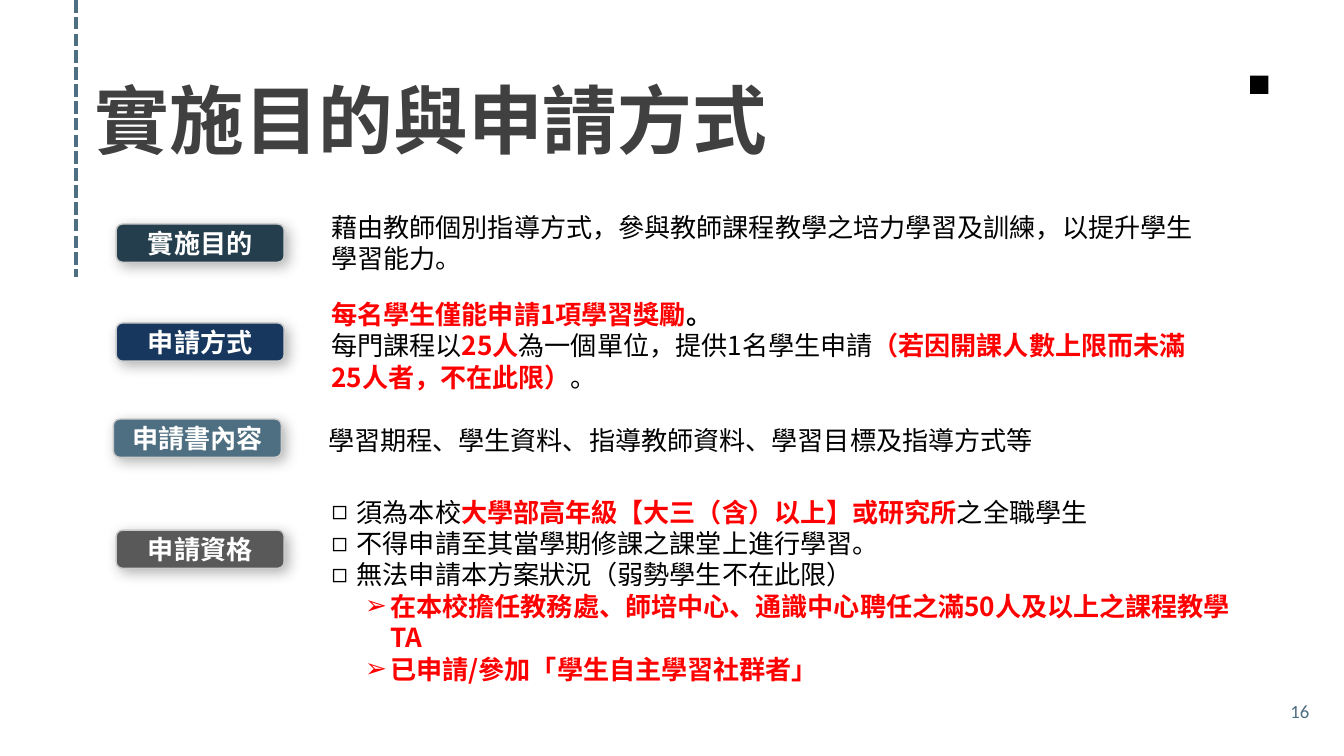
from lxml import etree
from pptx import Presentation
from pptx.dml.color import RGBColor
from pptx.enum.dml import MSO_LINE
from pptx.enum.shapes import MSO_CONNECTOR, MSO_SHAPE
from pptx.enum.text import MSO_ANCHOR, MSO_AUTO_SIZE, PP_ALIGN
from pptx.oxml.ns import qn
from pptx.util import Pt

RECTANGLE, ROUNDED = MSO_SHAPE.RECTANGLE, MSO_SHAPE.ROUNDED_RECTANGLE
TOP, MIDDLE = MSO_ANCHOR.TOP, MSO_ANCHOR.MIDDLE
LEFT, CENTER, RIGHT = PP_ALIGN.LEFT, PP_ALIGN.CENTER, PP_ALIGN.RIGHT
CJK = "Noto Sans CJK SC"
COLORS = {
    "black": "000000", "white": "FFFFFF", "red": "FF0000", "title": "404040",
    "steel": "4E6E81", "teal": "243E4D", "navy": "17375E", "gray": "595959",
    "border": "CBCBCB",
}
# Run styles: colour and bold
PLAIN, STRONG, ALERT = ("black", False), ("black", True), ("red", True)
LABEL = ("white", True)


def color(name):
    return RGBColor.from_string(COLORS[name])


def write(shape, paragraphs, size=28, font=CJK, align=LEFT, anchor=TOP):
    """Fill a shape with paragraphs, each a list of (text, (colour, bold))."""
    frame = shape.text_frame
    frame.word_wrap = True
    frame.auto_size = MSO_AUTO_SIZE.NONE
    frame.vertical_anchor = anchor
    for index, runs in enumerate(paragraphs):
        paragraph = frame.add_paragraph() if index else frame.paragraphs[0]
        paragraph.alignment = align
        paragraph.line_spacing = Pt(size * 1.2)
        paragraph.space_before = Pt(0)
        for text, (color_name, bold) in runs:
            run = paragraph.add_run()
            run.text = text
            run.font.size = Pt(size)
            run.font.name = font
            run.font.bold = bold
            run.font.color.rgb = color(color_name)
            east_asian = etree.SubElement(run._r.get_or_add_rPr(), qn("a:ea"))
            east_asian.set("typeface", font)


presentation = Presentation()
presentation.slide_width, presentation.slide_height = Pt(1440), Pt(810)
slide = presentation.slides.add_slide(presentation.slide_layouts[1])
shapes = slide.shapes

# Decoration
dashes = shapes.add_connector(MSO_CONNECTOR.STRAIGHT, Pt(81.5), Pt(0), Pt(81.5), Pt(297))
dashes.line.color.rgb = color("steel")
dashes.line.width = Pt(4.5)
dashes.line.dash_style = MSO_LINE.SQUARE_DOT
dashes_properties = dashes._element.spPr
dashes_properties.find(qn("a:ln")).find(qn("a:prstDash")).set("val", "sysDash")
etree.SubElement(dashes_properties, qn("a:effectLst"))

square = shapes.add_shape(RECTANGLE, Pt(1339.5), Pt(81), Pt(19.5), Pt(19.5))
square.shadow.inherit = False
square.fill.solid()
square.fill.fore_color.rgb = color("black")
square.line.fill.background()

# Title
title = shapes.title
title.left, title.top, title.width, title.height = Pt(101.5), Pt(79), Pt(918), Pt(97)
frame = title.text_frame
frame.margin_left = frame.margin_right = frame.margin_top = frame.margin_bottom = 0
write(title, [[("實施目的與申請方式", ("title", True))]], size=80)

# Section badges: label, fill, left, top
badges = [
    ("實施目的", "teal", 124.5, 240),
    ("申請方式", "navy", 124.5, 346),
    ("申請書內容", "steel", 121.5, 449),
    ("申請資格", "gray", 124.5, 568),
]
for label, fill, left, top in badges:
    badge = shapes.add_shape(ROUNDED, Pt(left), Pt(top), Pt(180), Pt(41))
    badge.fill.solid()
    badge.fill.fore_color.rgb = color(fill)
    badge.line.color.rgb = color("border")
    badge.line.width = Pt(1.5)
    badge.shadow.inherit = False
    shadow = etree.SubElement(
        badge._element.spPr.find(qn("a:effectLst")), qn("a:outerShdw"),
        blurRad=str(Pt(15)), dist=str(Pt(6)), dir="2700000", algn="tl", rotWithShape="0")
    shadow_color = etree.SubElement(shadow, qn("a:srgbClr"), val=COLORS["black"])
    etree.SubElement(shadow_color, qn("a:alpha"), val="30000")
    write(badge, [[(label, LABEL)]], align=CENTER, anchor=MIDDLE)

# Section texts: left, top, width, height, paragraphs
sections = [
    (348, 222.5, 952.5, 75, [
        [("藉由教師個別指導方式，參與教師課程教學之培力學習及訓練，以提升學生學習能力。", PLAIN)]]),
    (348, 316, 952.5, 109, [
        [("每名學生僅能申請1項學習獎勵", ALERT), ("。", STRONG)],
        [("每門課程以", PLAIN), ("25人", ALERT), ("為一個單位，提供1名學生申請", PLAIN),
         ("（若因開課人數上限而未滿25人者，不在此限）", ALERT), ("。", PLAIN)]]),
    (344.5, 451.5, 989, 41, [
        [("學習期程、學生資料、指導教師資料、學習目標及指導方式等", PLAIN)]]),
]
for left, top, width, height, paragraphs in sections:
    section = shapes.add_textbox(Pt(left), Pt(top), Pt(width), Pt(height))
    write(section, paragraphs)

# Eligibility list: level, runs
eligibility = [
    (0, [("須為本校", PLAIN), ("大學部高年級【大三（含）以上】或研究所", ALERT),
         ("之全職學生", PLAIN)]),
    (0, [("不得申請至其當學期修課之課堂上進行學習。", PLAIN)]),
    (0, [("無法申請本方案狀況（弱勢學生不在此限）", PLAIN)]),
    (1, [("在本校擔任教務處、師培中心、通識中心聘任之滿50人及以上之課程教學TA", ALERT)]),
    (1, [("已申請/參加「學生自主學習社群者」", ALERT)]),
]
body = slide.placeholders[1]
body.left, body.top, body.width, body.height = Pt(348), Pt(528), Pt(980), Pt(211)
write(body, [runs for level, runs in eligibility])
for paragraph, (level, runs) in zip(body.text_frame.paragraphs, eligibility):
    paragraph.level = level
    properties = paragraph._p.get_or_add_pPr()
    properties.set("marL", str(Pt(27 + 36 * level)))
    properties.set("indent", str(Pt(-27)))
    etree.SubElement(properties, qn("a:buChar"), char="◻➢"[level])

# Page number
page_number = shapes.add_textbox(Pt(1242), Pt(747), Pt(168), Pt(29))
write(page_number, [[("16", ("steel", False))]], size=20, font="Calibri",
      align=RIGHT, anchor=MIDDLE)

presentation.save("out.pptx")
